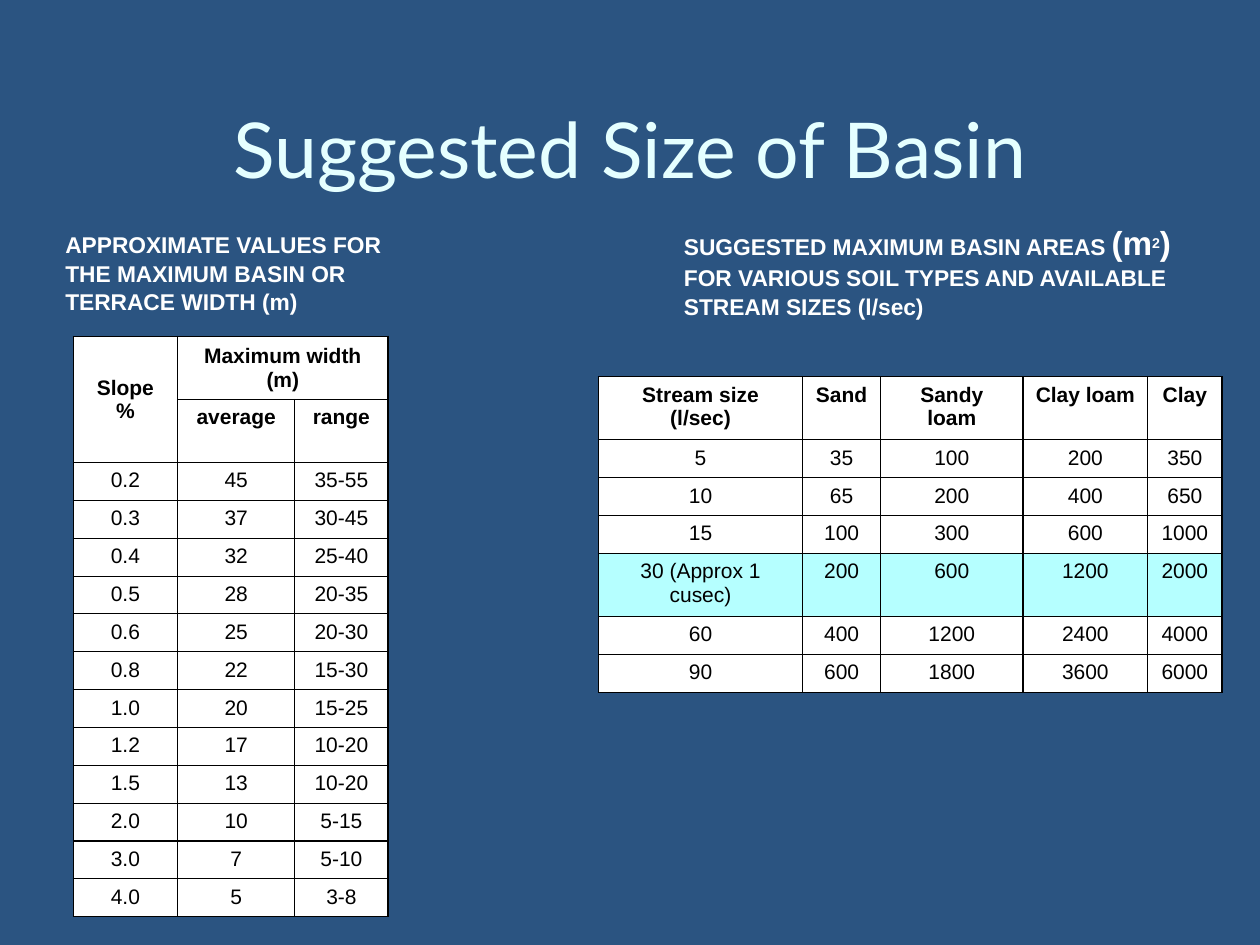
from dataclasses import dataclass

from lxml import etree
from pptx import Presentation
from pptx import util as u
from pptx.dml.color import RGBColor
from pptx.enum import text
from pptx.oxml import ns

PX = 9144
BACKGROUND = RGBColor(0x2B, 0x54, 0x81)
TITLE_COLOR = RGBColor(0xE5, 0xFF, 0xFF)
WHITE = RGBColor(0xFF, 0xFF, 0xFF)
BLACK = RGBColor(0x00, 0x00, 0x00)
HIGHLIGHT = RGBColor(0xB5, 0xFF, 0xFF)
ROW_HEIGHT = 30
TALL_ROW_HEIGHT = 50


@dataclass(frozen=True)
class Run:
    text: str
    size: int
    baseline: int = 0


@dataclass(frozen=True)
class TextBlock:
    box: tuple[int, int, int, int]
    runs: tuple[Run, ...]
    font: str = "Arial"
    color: RGBColor = WHITE
    bold: bool = True
    line_spacing: float = 1.05
    alignment: text.PP_ALIGN = text.PP_ALIGN.LEFT
    anchor: text.MSO_ANCHOR = text.MSO_ANCHOR.TOP


@dataclass(frozen=True)
class DataTable:
    left: int
    top: int
    columns: tuple[int, ...]
    rows: tuple[tuple[str, ...], ...]
    header_rows: int
    tall_rows: tuple[int, ...]
    highlighted_row: int | None = None
    merges: tuple[tuple[int, int, int, int], ...] = ()


TITLE = TextBlock(
    (50, 42, 900, 150), (Run("Suggested Size of Basin", 44),), "Lato", TITLE_COLOR,
    False, 1.0, text.PP_ALIGN.CENTER, text.MSO_ANCHOR.MIDDLE,
)
WIDTH_CAPTION = TextBlock(
    (42, 177, 292, 109),
    (Run("APPROXIMATE VALUES FOR THE MAXIMUM BASIN OR TERRACE WIDTH (m)", 13),),
)
AREA_CAPTION = TextBlock(
    (533, 170, 436, 118),
    (
        Run("SUGGESTED MAXIMUM BASIN AREAS ", 13),
        Run("(m", 19),
        Run("2", 14, 30),
        Run(")", 19),
        Run(" FOR VARIOUS SOIL TYPES AND AVAILABLE STREAM SIZES (l/sec)", 13),
    ),
)
WIDTH_TABLE = DataTable(
    58, 267, (83, 93, 74),
    (
        ("Slope %", "Maximum width (m)", ""),
        ("", "average", "range"),
        ("0.2", "45", "35-55"),
        ("0.3", "37", "30-45"),
        ("0.4", "32", "25-40"),
        ("0.5", "28", "20-35"),
        ("0.6", "25", "20-30"),
        ("0.8", "22", "15-30"),
        ("1.0", "20", "15-25"),
        ("1.2", "17", "10-20"),
        ("1.5", "13", "10-20"),
        ("2.0", "10", "5-15"),
        ("3.0", "7", "5-10"),
        ("4.0", "5", "3-8"),
    ),
    header_rows=2, tall_rows=(0, 1), merges=((0, 0, 1, 0), (0, 1, 0, 2)),
)
AREA_TABLE = DataTable(
    475, 299, (162, 62, 113, 99, 59),
    (
        ("Stream size (l/sec)", "Sand", "Sandy loam", "Clay loam", "Clay"),
        ("5", "35", "100", "200", "350"),
        ("10", "65", "200", "400", "650"),
        ("15", "100", "300", "600", "1000"),
        ("30 (Approx 1 cusec)", "200", "600", "1200", "2000"),
        ("60", "400", "1200", "2400", "4000"),
        ("90", "600", "1800", "3600", "6000"),
    ),
    header_rows=1, tall_rows=(0, 4), highlighted_row=4,
)


def draw_text(slide, block: TextBlock) -> None:
    shape = slide.shapes.add_textbox(*(length * PX for length in block.box))
    frame = shape.text_frame
    frame.word_wrap = True
    frame.vertical_anchor = block.anchor
    paragraph = frame.paragraphs[0]
    paragraph.alignment = block.alignment
    paragraph.line_spacing = block.line_spacing
    paragraph.font.name = block.font
    paragraph.font.bold = block.bold
    paragraph.font.color.rgb = block.color
    for part in block.runs:
        run = paragraph.add_run()
        run.text = part.text
        run.font.size = u.Pt(part.size)
        if part.baseline:
            run.font._element.set("baseline", str(part.baseline * 1000))


def add_borders(cell) -> None:
    properties = cell._tc.get_or_add_tcPr()
    for index, side in enumerate(("lnL", "lnR", "lnT", "lnB")):
        line = etree.Element(ns.qn(f"a:{side}"), w=str(u.Pt(0.75)))
        fill = etree.SubElement(line, ns.qn("a:solidFill"))
        etree.SubElement(fill, ns.qn("a:srgbClr"), val=str(BLACK))
        properties.insert(index, line)


def draw_table(slide, data: DataTable) -> None:
    heights = [
        TALL_ROW_HEIGHT if row in data.tall_rows else ROW_HEIGHT
        for row in range(len(data.rows))
    ]
    shape = slide.shapes.add_table(
        len(data.rows), len(data.columns), data.left * PX, data.top * PX,
        sum(data.columns) * PX, sum(heights) * PX,
    )
    table = shape.table
    for column, width in zip(table.columns, data.columns):
        column.width = width * PX
    for row, height in zip(table.rows, heights):
        row.height = height * PX
    for row_index, values in enumerate(data.rows):
        for column_index, value in enumerate(values):
            cell = table.cell(row_index, column_index)
            cell.fill.solid()
            highlighted = row_index == data.highlighted_row
            cell.fill.fore_color.rgb = HIGHLIGHT if highlighted else WHITE
            add_borders(cell)
            cell.text = value
            paragraph = cell.text_frame.paragraphs[0]
            paragraph.alignment = text.PP_ALIGN.CENTER
            paragraph.font.name = "Arial"
            paragraph.font.size = u.Pt(12)
            paragraph.font.bold = row_index < data.header_rows
            paragraph.font.color.rgb = BLACK
    for first_row, first_column, last_row, last_column in data.merges:
        cell = table.cell(first_row, first_column)
        cell.merge(table.cell(last_row, last_column))
        cell.vertical_anchor = text.MSO_ANCHOR.MIDDLE


def main() -> None:
    presentation = Presentation()
    presentation.slide_width = 1000 * PX
    presentation.slide_height = 750 * PX
    slide = presentation.slides.add_slide(presentation.slide_layouts[6])
    slide.background.fill.solid()
    slide.background.fill.fore_color.rgb = BACKGROUND
    draw_text(slide, TITLE)
    draw_text(slide, WIDTH_CAPTION)
    draw_table(slide, WIDTH_TABLE)
    draw_text(slide, AREA_CAPTION)
    draw_table(slide, AREA_TABLE)
    presentation.save("out.pptx")


if __name__ == "__main__":
    main()
